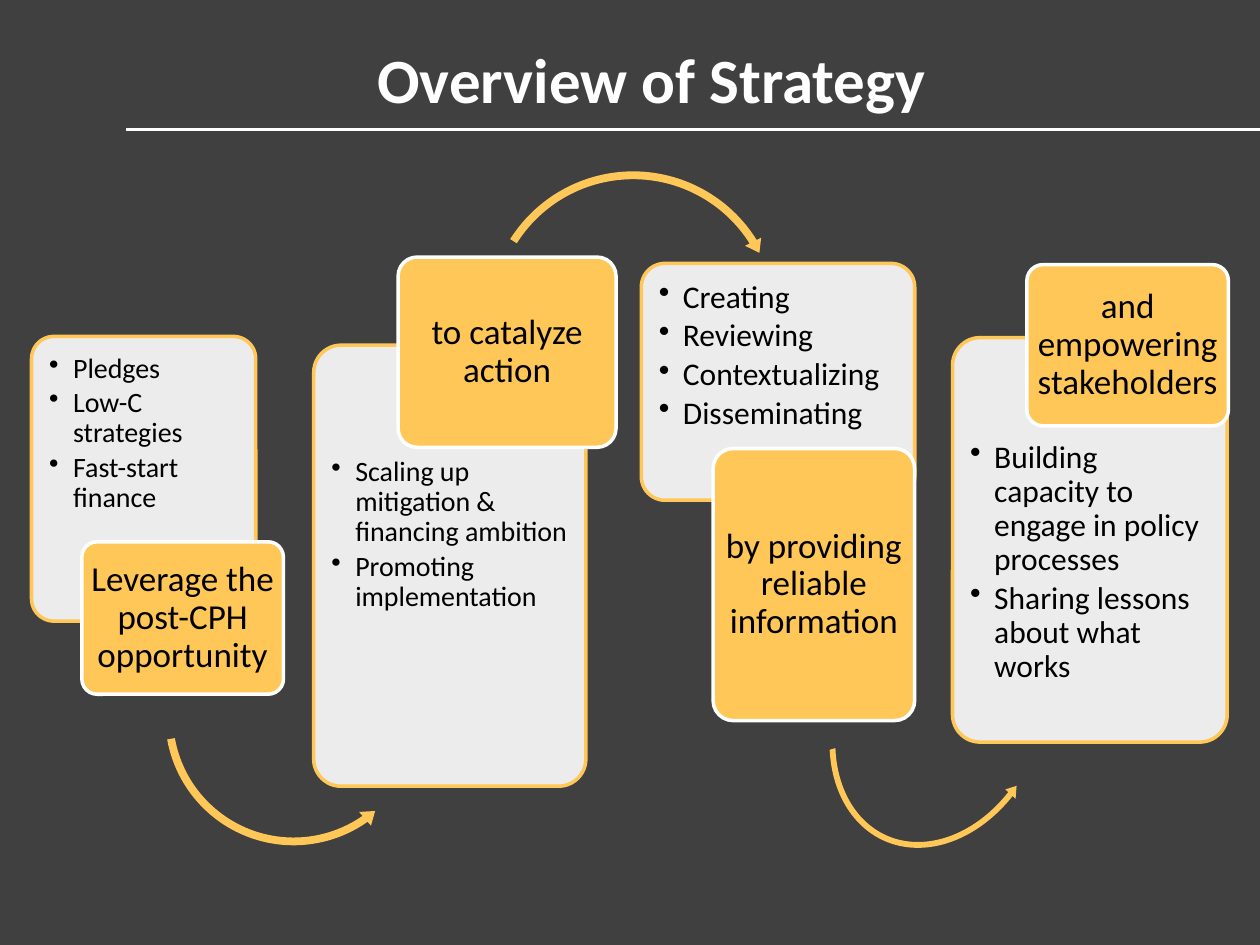
from dataclasses import dataclass

from lxml import etree
from pptx import Presentation
from pptx.dml.color import RGBColor
from pptx.enum.shapes import MSO_CONNECTOR, MSO_SHAPE
from pptx.enum.text import MSO_ANCHOR, PP_ALIGN
from pptx.oxml.ns import qn
from pptx.util import Inches, Pt

ROUNDED = MSO_SHAPE.ROUNDED_RECTANGLE
ARC_OVER = MSO_SHAPE.CIRCULAR_ARROW
ARC_UNDER = MSO_SHAPE.LEFT_CIRCULAR_ARROW
STRAIGHT = MSO_CONNECTOR.STRAIGHT
CENTER, LEFT = PP_ALIGN.CENTER, PP_ALIGN.LEFT
MIDDLE, TOP = MSO_ANCHOR.MIDDLE, MSO_ANCHOR.TOP

CHARCOAL = RGBColor(0x40, 0x40, 0x40)
WHITE = RGBColor(0xFF, 0xFF, 0xFF)
BLACK = RGBColor(0x00, 0x00, 0x00)
AMBER = RGBColor(0xFF, 0xC7, 0x58)

FONT = "Calibri"
CORNER = 0.1
CORNER_TEXT_INSET = 0.29 * CORNER
PANEL_PADDING = 0.14
BULLET_INDENT = 0.19


@dataclass
class Step:
    """One stage of the strategy: its panel of points, its label and the arrow onward."""

    label: str
    label_box: tuple
    points: list
    point_size: int
    panel_box: tuple
    points_offset: float = 0
    arrow: tuple = ()


STEPS = [
    Step("Leverage the post-CPH opportunity", (0.65, 4.3, 1.6, 1.21),
         ["Pledges", "Low-C strategies", "Fast-start finance"], 16,
         (0.25, 2.67, 1.78, 2.26),
         arrow=(ARC_UNDER, (1.27, 4.63, 2.12, 2.12), 17.5,
                (0.029, 3.526, 22.464, 91.427, 0.034))),
    Step("to catalyze action", (3.16, 2.04, 1.73, 1.51),
         ["Scaling up mitigation & financing ambition", "Promoting implementation"], 16,
         (2.49, 2.74, 2.16, 3.5), 0.75,
         arrow=(ARC_OVER, (3.83, 1.32, 2.39, 2.39), 4.7,
                (0.026, 3.1, 193.952, 124.563, 0.03))),
    Step("by providing reliable information", (5.66, 3.56, 1.6, 2.16),
         ["Creating", "Reviewing", "Contextualizing", "Disseminating"], 18,
         (5.09, 2.09, 2.17, 1.88),
         arrow=(ARC_UNDER, (6.6, 4.57, 1.72, 2.23), 24.3,
                (0.027, 3.336, 14.115, 83.268, 0.032))),
    Step("and empowering stakeholders", (8.15, 2.1, 1.6, 1.28),
         ["Building capacity to engage in policy processes",
          "Sharing lessons about what works"], 18,
         (7.56, 2.68, 2.18, 3.21), 0.68),
]


def write_paragraph(paragraph, text, *, size, color=BLACK, bold=False, align=CENTER,
                    spacing=0.9, after=0.0, bullet=False):
    """Fill a paragraph with formatted text."""
    paragraph.alignment = align
    paragraph.line_spacing = spacing
    paragraph.space_before = Pt(0)
    paragraph.space_after = Pt(size * after)
    run = paragraph.add_run()
    run.text = text
    run.font.name = FONT
    run.font.size = Pt(size)
    run.font.bold = bold
    run.font.color.rgb = color
    if bullet:
        properties = paragraph._p.get_or_add_pPr()
        properties.set("marL", str(Inches(BULLET_INDENT)))
        properties.set("indent", str(-Inches(BULLET_INDENT)))
        etree.SubElement(properties, qn("a:buChar")).set("char", "•")


def set_margins(frame, left, top, right, bottom):
    """Set the inner margins of a text frame in inches."""
    frame.margin_left, frame.margin_top = Inches(left), Inches(top)
    frame.margin_right, frame.margin_bottom = Inches(right), Inches(bottom)


def add_card(slide, box, fill, outline):
    """Add a rounded card with wrapped text and return it."""
    card = slide.shapes.add_shape(ROUNDED, *map(Inches, box))
    card.adjustments[0] = CORNER
    card.shadow.inherit = False
    card.fill.solid()
    card.fill.fore_color.rgb = fill
    card.line.color.rgb = outline
    card.line.width = Pt(2)
    card.text_frame.word_wrap = True
    return card


def add_panel(slide, box, points, size, offset):
    """Add a translucent panel with its bulleted points, lowered by the offset."""
    panel = add_card(slide, box, WHITE, AMBER)
    color = panel.fill._xPr.find(qn("a:solidFill"))[0]
    etree.SubElement(color, qn("a:alpha")).set("val", "90000")
    frame = panel.text_frame
    frame.vertical_anchor = TOP
    margin = PANEL_PADDING - CORNER_TEXT_INSET * min(box[2:])
    set_margins(frame, margin, margin + offset, margin, margin)
    for index, point in enumerate(points):
        paragraph = frame.add_paragraph() if index else frame.paragraphs[0]
        write_paragraph(paragraph, point, size=size, align=LEFT, after=0.15, bullet=True)


def add_label(slide, box, text):
    """Add the solid label of a step."""
    frame = add_card(slide, box, AMBER, WHITE).text_frame
    frame.vertical_anchor = MIDDLE
    set_margins(frame, 0, 0, 0, 0)
    write_paragraph(frame.paragraphs[0], text, size=20)


def add_arrow(slide, kind, box, rotation, adjustments):
    """Add a curved arrow that leads to the next step."""
    arrow = slide.shapes.add_shape(kind, *map(Inches, box))
    for index, value in enumerate(adjustments):
        arrow.adjustments[index] = value
    arrow.rotation = rotation
    arrow.shadow.inherit = False
    arrow.fill.solid()
    arrow.fill.fore_color.rgb = AMBER
    arrow.line.fill.background()


def add_step(slide, step):
    """Add one step: panel, onward arrow and label."""
    add_panel(slide, step.panel_box, step.points, step.point_size, step.points_offset)
    if step.arrow:
        add_arrow(slide, *step.arrow)
    add_label(slide, step.label_box, step.label)


def add_heading(slide, box, text):
    """Place the title in its box."""
    title = slide.shapes.title
    title.left, title.top, title.width, title.height = map(Inches, box)
    title.text_frame.vertical_anchor = MIDDLE
    write_paragraph(title.text_frame.paragraphs[0], text, size=36, color=WHITE,
                    bold=True, spacing=1.0)


def add_rule(slide, left, right, top):
    """Draw the line under the title."""
    rule = slide.shapes.add_connector(STRAIGHT, Inches(left), Inches(top),
                                      Inches(right), Inches(top))
    rule.line.color.rgb = WHITE
    rule.line.width = Pt(1.5)
    etree.SubElement(rule._element.spPr, qn("a:effectLst"))


def main():
    """Build and save the strategy slide."""
    presentation = Presentation()
    presentation.slide_width, presentation.slide_height = Inches(10), Inches(7.5)
    slide = presentation.slides.add_slide(presentation.slide_layouts[5])
    slide.background.fill.solid()
    slide.background.fill.fore_color.rgb = CHARCOAL
    add_heading(slide, (0.17, 0, 10, 1.25), "Overview of Strategy")
    for step in STEPS:
        add_step(slide, step)
    add_rule(slide, 1, 10, 1.03)
    presentation.save("out.pptx")


if __name__ == "__main__":
    main()
